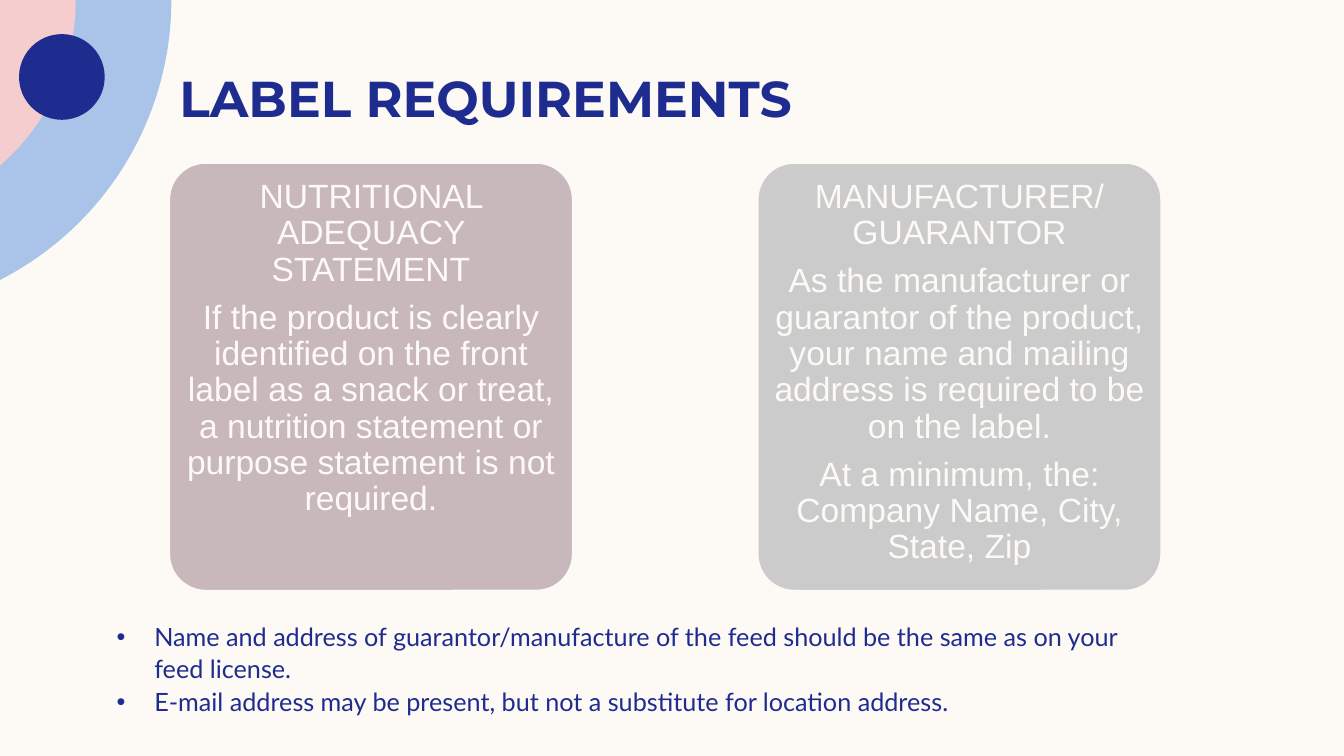
from math import acos, cos, sin

from lxml.etree import SubElement
from pptx import Presentation
from pptx.dml.color import RGBColor
from pptx.enum.shapes import MSO_SHAPE as Preset
from pptx.enum.text import MSO_ANCHOR as Anchor, PP_ALIGN as Align
from pptx.oxml.ns import qn
from pptx.util import Cm, Pt

CREAM = RGBColor(0xFD, 0xFA, 0xF6)
NAVY = RGBColor(0x1F, 0x2C, 0x8F)
SKY = RGBColor(0xAA, 0xC3, 0xE8)
PINK = RGBColor(0xF5, 0xCD, 0xCE)
MAUVE = RGBColor(0xC8, 0xB8, 0xBB)
GRAY = RGBColor(0xCB, 0xCB, 0xCB)

ARC_CENTER_X = -3.6
ARC_STEPS = 60
CARD_TOP, CARD_WIDTH, CARD_HEIGHT = 4.11, 10.16, 10.77
CARDS = [
    (4.27, MAUVE, [
        "NUTRITIONAL ADEQUACY STATEMENT",
        "If the product is clearly identified on the front label as a snack or "
        "treat, a nutrition statement or purpose statement is not required.",
    ]),
    (19.1, GRAY, [
        "MANUFACTURER/ GUARANTOR",
        "As the manufacturer or guarantor of the product, your name and "
        "mailing address is required to be on the label.",
        "At a minimum, the: Company Name, City, State, Zip",
    ]),
]
NOTES = [
    "Name and address of guarantor/manufacture of the feed should be the same "
    "as on your feed license.",
    "E-mail address may be present, but not a substitute for location address.",
]


class LabelSlide:
    def __init__(self, presentation):
        self.slide = presentation.slides.add_slide(presentation.slide_layouts[6])
        self.shapes = self.slide.shapes
        background = self.slide.background.fill
        background.solid()
        background.fore_color.rgb = CREAM

    def paint(self, shape, color):
        shape.shadow.inherit = False
        shape.fill.solid()
        shape.fill.fore_color.rgb = color
        shape.line.fill.background()

    def set_text(self, frame, texts, font, size, color, insets, bold=False):
        """Fill a frame with paragraphs; insets run left, top, right, bottom."""
        frame.word_wrap = True
        frame.vertical_anchor = Anchor.TOP
        (frame.margin_left, frame.margin_top,
         frame.margin_right, frame.margin_bottom) = map(Cm, insets)
        for index, text in enumerate(texts):
            paragraph = frame.paragraphs[0] if index == 0 else frame.add_paragraph()
            paragraph.text = text
            paragraph.font.name = font
            paragraph.font.size = Pt(size)
            paragraph.font.bold = bold
            paragraph.font.color.rgb = color
        return frame.paragraphs

    def corner_arc(self, radius, color):
        """Draw the part of a disc centred left of the slide that shows on it."""
        sweep = acos(-ARC_CENTER_X / radius)
        angles = [sweep * step / ARC_STEPS for step in range(ARC_STEPS + 1)]
        rim = [(Cm(ARC_CENTER_X + radius * cos(a)), Cm(radius * sin(a)))
               for a in angles]
        builder = self.shapes.build_freeform(0, 0)
        builder.add_line_segments(rim, close=True)
        self.paint(builder.convert_to_shape(), color)

    def dot(self, left, top, diameter, color):
        circle = self.shapes.add_shape(
            Preset.OVAL, Cm(left), Cm(top), Cm(diameter), Cm(diameter))
        self.paint(circle, color)

    def title(self, text):
        heading = self.shapes.add_textbox(Cm(4.27), Cm(1.7), Cm(27.43), Cm(1.32))
        self.set_text(heading.text_frame, [text], "Montserrat", 36, NAVY,
                      (0.25, 0, 0.25, 0), bold=True)

    def card(self, left, color, texts):
        card = self.shapes.add_shape(
            Preset.ROUNDED_RECTANGLE,
            Cm(left), Cm(CARD_TOP), Cm(CARD_WIDTH), Cm(CARD_HEIGHT))
        card.adjustments[0] = 0.09
        self.paint(card, color)
        card.line.color.rgb = CREAM
        card.line.width = Pt(1)
        for paragraph in self.set_text(card.text_frame, texts, "Arial", 24, CREAM,
                                       (0.15, 0.15, 0.15, 0.15)):
            paragraph.alignment = Align.CENTER
            paragraph.line_spacing = 0.9
            paragraph.space_after = Pt(8.4)

    def bullets(self, texts):
        notes = self.shapes.add_textbox(Cm(2.69), Cm(15.47), Cm(29.03), Cm(1.85))
        for paragraph in self.set_text(notes.text_frame, texts, "Lato", 18, NAVY,
                                       (0.25, 0.13, 2.8, 0.13)):
            paragraph.line_spacing = Pt(23.2)
            properties = paragraph._p.get_or_add_pPr()
            properties.set("marL", str(Cm(0.95)))
            properties.set("indent", str(-Cm(0.95)))
            # Bullet elements must come before the default run properties.
            defaults = properties.find(qn("a:defRPr"))
            SubElement(properties, qn("a:buFont")).set("typeface", "Arial")
            SubElement(properties, qn("a:buChar")).set("char", "•")
            if defaults is not None:
                properties.append(defaults)


def main():
    presentation = Presentation()
    presentation.slide_width = Cm(33.87)
    presentation.slide_height = Cm(19.05)
    slide = LabelSlide(presentation)
    slide.corner_arc(7.92, SKY)
    slide.corner_arc(5.51, PINK)
    slide.dot(0.48, 0.86, 2.16, NAVY)
    slide.title("LABEL REQUIREMENTS")
    for left, color, texts in CARDS:
        slide.card(left, color, texts)
    slide.bullets(NOTES)
    presentation.save("out.pptx")


if __name__ == "__main__":
    main()
